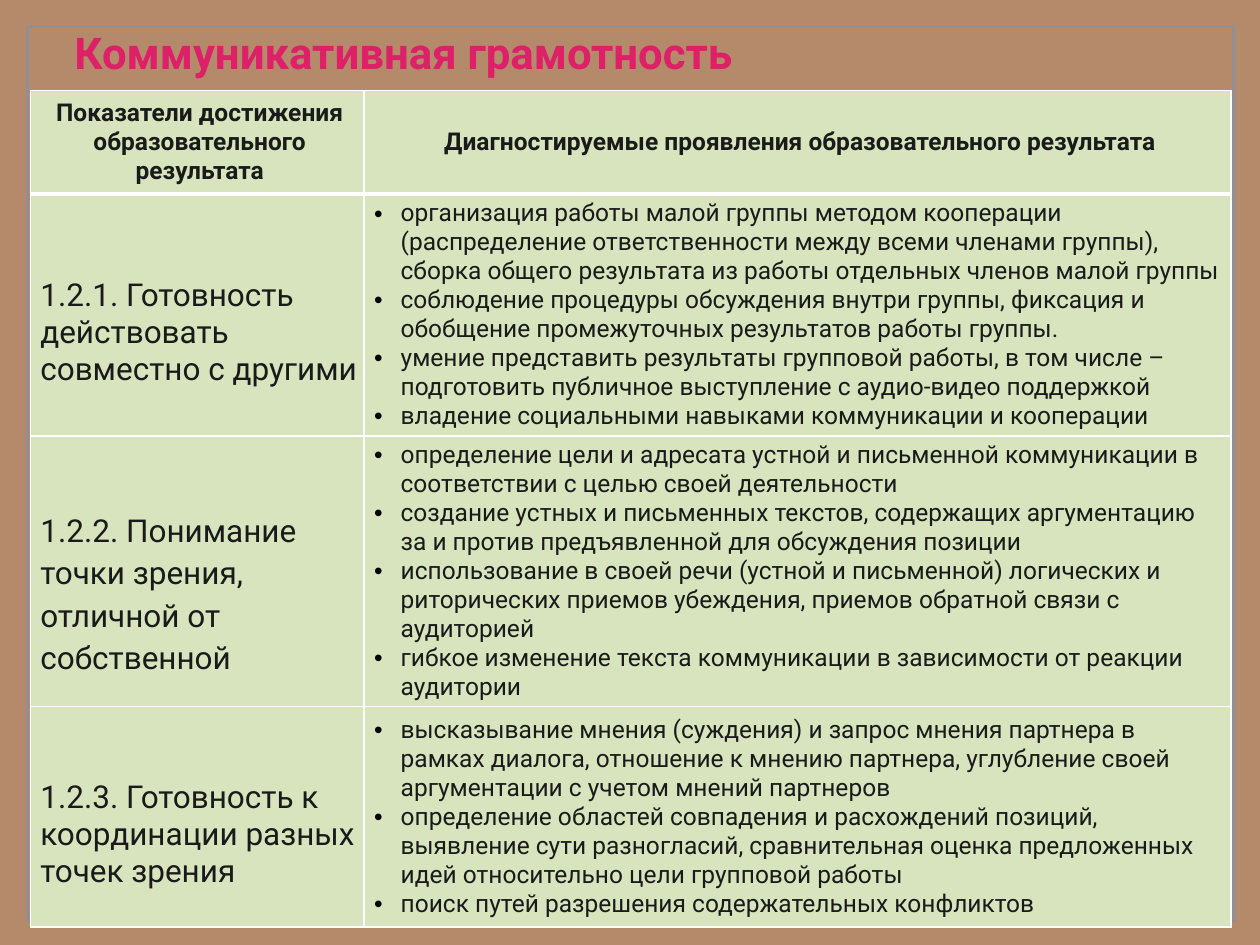
from dataclasses import dataclass

from lxml import etree
from pptx import Presentation
from pptx.dml.color import RGBColor
from pptx.enum import shapes, text
from pptx.oxml.ns import qn
from pptx.util import Inches, Pt


@dataclass(frozen=True)
class Theme:
    font: str = "Roboto"
    background: str = "B58A6B"
    frame: str = "908F95"
    title: str = "DD2067"
    ink: str = "1A1A1A"
    bullet: str = "000000"
    cell: str = "D7E4BD"
    border: str = "FFFFFF"
    title_size: int = 25
    label_size: int = 18
    body_size: int = 14


THEME = Theme()
PAD = Inches(0.04)
COLUMNS = (2.65, 6.88)
ROWS = (0.82, 1.89, 2.1, 1.75)
TITLE = "Коммуникативная грамотность"
HEADERS = (
    "Показатели достижения образовательного результата",
    "Диагностируемые проявления образовательного результата",
)
# Label, line spacing, space above the label in inches, list of signs
RESULTS = [
    ("1.2.1. Готовность действовать совместно с другими", 1.0, 0.29, [
        "организация работы малой группы методом кооперации (распределение "
        "ответственности между всеми членами группы), сборка общего результата "
        "из работы отдельных членов малой группы",
        "соблюдение процедуры обсуждения внутри группы, фиксация и обобщение "
        "промежуточных результатов работы группы.",
        "умение представить результаты групповой работы, в том числе – "
        "подготовить публичное выступление с аудио-видео поддержкой",
        "владение социальными навыками коммуникации и кооперации",
    ]),
    ("1.2.2. Понимание точки зрения, отличной от собственной", 1.15, 0.34, [
        "определение цели и адресата устной и письменной коммуникации в "
        "соответствии с целью своей деятельности",
        "создание устных и письменных текстов, содержащих аргументацию за и "
        "против предъявленной для обсуждения позиции",
        "использование в своей речи (устной и письменной) логических и "
        "риторических приемов убеждения, приемов обратной связи с аудиторией",
        "гибкое изменение текста коммуникации в зависимости от реакции аудитории",
    ]),
    ("1.2.3. Готовность к координации разных точек зрения", 1.0, 0.29, [
        "высказывание мнения (суждения) и запрос мнения партнера в рамках "
        "диалога, отношение к мнению партнера, углубление своей аргументации "
        "с учетом мнений партнеров",
        "определение областей совпадения и расхождений позиций, выявление сути "
        "разногласий, сравнительная оценка предложенных идей относительно цели "
        "групповой работы",
        "поиск путей разрешения содержательных конфликтов",
    ]),
]


def rgb(value):
    return RGBColor.from_string(value)


def format_paragraph(p, size, color, bold=False, align=text.PP_ALIGN.LEFT,
                     left=0.04, hanging=0.0, spacing=1.0):
    p.alignment = align
    p.line_spacing = spacing
    p.space_before = p.space_after = Pt(0)
    pPr = p._p.get_or_add_pPr()
    pPr.set("marL", str(Inches(left)))
    pPr.set("indent", str(-Inches(hanging)))
    for r in p.runs:
        r.font.name = THEME.font
        r.font.size = Pt(size)
        r.font.bold = bold
        r.font.color.rgb = rgb(color)


def add_bullet(p):
    pPr = p._p.get_or_add_pPr()
    color = etree.SubElement(pPr, qn("a:buClr"))
    etree.SubElement(color, qn("a:srgbClr"), val=THEME.bullet)
    etree.SubElement(pPr, qn("a:buFont"), typeface="Arial")
    etree.SubElement(pPr, qn("a:buChar"), char="•")


def set_margins(box):
    box.margin_left = box.margin_right = PAD
    box.margin_top = box.margin_bottom = PAD
    box.vertical_anchor = text.MSO_ANCHOR.MIDDLE


def style_cell(cell, top=1, bottom=1):
    set_margins(cell)
    cell.fill.solid()
    cell.fill.fore_color.rgb = rgb(THEME.cell)
    tcPr = cell._tc.get_or_add_tcPr()
    sides = (("a:lnL", 1), ("a:lnR", 1), ("a:lnT", top), ("a:lnB", bottom))
    for i, (tag, width) in enumerate(sides):
        line = etree.Element(qn(tag), w=str(Pt(width)))
        fill = etree.SubElement(line, qn("a:solidFill"))
        etree.SubElement(fill, qn("a:srgbClr"), val=THEME.border)
        tcPr.insert(i, line)


def add_frame(slide, x, y, w, h):
    sp = slide.shapes.add_shape(shapes.MSO_SHAPE.RECTANGLE, x, y, w, h)
    sp.shadow.inherit = False
    sp.fill.background()
    sp.line.color.rgb = rgb(THEME.frame)
    sp.line.width = Pt(2)
    slide.shapes._spTree.insert(2, sp._element)  # behind the title


def add_title(slide, x, y, w, h):
    sp = slide.shapes.title
    sp.left, sp.top, sp.width, sp.height = x, y, w, h
    tf = sp.text_frame
    tf.text = TITLE
    tf.word_wrap = True
    set_margins(tf)
    format_paragraph(tf.paragraphs[0], THEME.title_size, THEME.title,
                     bold=True, left=0.31, spacing=0.9)


def add_results_table(slide, x, y, w, h):
    table = slide.shapes.add_table(len(ROWS), len(COLUMNS), x, y, w, h).table
    for column, width in zip(table.columns, COLUMNS):
        column.width = Inches(width)
    for row, height in zip(table.rows, ROWS):
        row.height = Inches(height)

    # Header row
    for col, heading in enumerate(HEADERS):
        cell = table.cell(0, col)
        cell.text = heading
        style_cell(cell, bottom=3)
        format_paragraph(cell.text_frame.paragraphs[0], THEME.body_size,
                         THEME.ink, bold=True, align=text.PP_ALIGN.CENTER)

    # One row for each result: label and bulleted signs
    for row, (label, spacing, offset, signs) in enumerate(RESULTS, start=1):
        label_cell, list_cell = table.cell(row, 0), table.cell(row, 1)
        for cell in (label_cell, list_cell):
            style_cell(cell, top=3 if row == 1 else 1)
        label_cell.text = label
        label_cell.margin_top = PAD + Inches(offset)
        format_paragraph(label_cell.text_frame.paragraphs[0],
                         THEME.label_size, THEME.ink, spacing=spacing)
        list_cell.text = "\n".join(signs)
        for p in list_cell.text_frame.paragraphs:
            add_bullet(p)
            format_paragraph(p, THEME.body_size, THEME.ink,
                             left=0.25, hanging=0.21)


def main():
    prs = Presentation()
    prs.slide_width, prs.slide_height = Inches(10), Inches(7.5)
    slide = prs.slides.add_slide(prs.slide_layouts[5])
    slide.background.fill.solid()
    slide.background.fill.fore_color.rgb = rgb(THEME.background)
    add_frame(slide, Inches(0.22), Inches(0.21), Inches(9.57), Inches(7.09))
    add_title(slide, Inches(0.24), Inches(0), Inches(9.54), Inches(0.87))
    add_results_table(slide, Inches(0.24), Inches(0.72),
                      Inches(sum(COLUMNS)), Inches(sum(ROWS)))
    prs.save("out.pptx")


if __name__ == "__main__":
    main()
